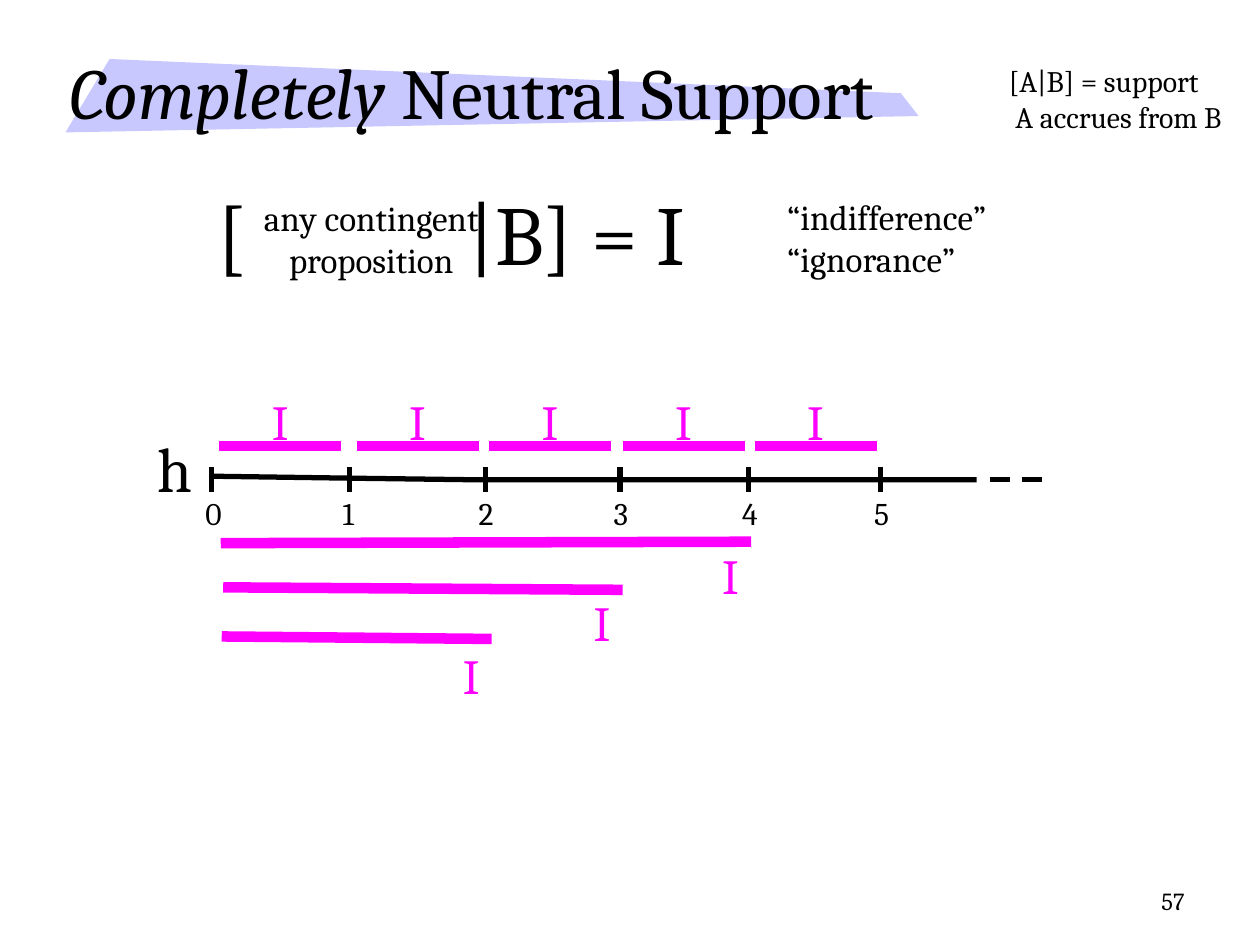
"""Build the slide on completely neutral support over a number line."""
from dataclasses import dataclass

from pptx import Presentation
from pptx.dml.color import RGBColor as Color
from pptx.enum.text import MSO_ANCHOR as Anchor, MSO_AUTO_SIZE as AutoSize, PP_ALIGN as Align
from pptx.oxml.xmlchemy import OxmlElement
from pptx.util import Cm, Pt


@dataclass(frozen=True)
class Theme:
    """Colours, font and type sizes."""
    font: str = "Cambria"
    ink: Color = Color(0x00, 0x00, 0x00)
    accent: Color = Color(0xFF, 0x00, 0xFF)
    highlight: Color = Color(0xC8, 0xC8, 0xFF)
    title: int = 41
    formula: int = 48
    variable: int = 36
    value: int = 28
    body: int = 20
    tick: int = 18
    note: int = 17
    page: int = 14
    axis_line: int = 3
    bar_line: int = 6


class SlideBuilder:
    """Draws styled elements on one slide."""

    def __init__(self, slide, theme):
        """Keep the slide and its style."""
        self.slide = slide
        self.theme = theme

    def style(self, text_frame, size, color, align=Align.LEFT):
        """Format every run of a text frame."""
        for paragraph in text_frame.paragraphs:
            paragraph.alignment = align
            for run in paragraph.runs:
                run.font.name = self.theme.font
                run.font.size = Pt(size)
                run.font.color.rgb = color

    def title(self, emphasis, rest, left, top, width, height):
        """Fill the title placeholder with an italic opening."""
        shape = self.slide.shapes.title
        shape.left, shape.top, shape.width, shape.height = map(Cm, (left, top, width, height))
        text_frame = shape.text_frame
        text_frame.text = emphasis
        text_frame.paragraphs[0].add_run().text = rest
        text_frame.auto_size = AutoSize.NONE
        text_frame.vertical_anchor = Anchor.MIDDLE
        self.style(text_frame, self.theme.title, self.theme.ink)
        text_frame.paragraphs[0].runs[0].font.italic = True

    def text(self, text, left, top, width, height, size, color=None,
             align=Align.LEFT, wrap=True, anchor=Anchor.TOP):
        """Add a text box and return it."""
        shape = self.slide.shapes.add_textbox(*map(Cm, (left, top, width, height)))
        text_frame = shape.text_frame
        text_frame.text = text
        text_frame.word_wrap = wrap
        text_frame.vertical_anchor = anchor
        self.style(text_frame, size, color or self.theme.ink, align)
        return shape

    def tab_stop(self, shape, position):
        """Set one left tab stop on the first paragraph."""
        properties = shape.text_frame.paragraphs[0]._p.get_or_add_pPr()
        tabs = OxmlElement("a:tabLst")
        tab = OxmlElement("a:tab")
        tab.set("pos", str(Cm(position)))
        tab.set("algn", "l")
        tabs.append(tab)
        properties.append(tabs)

    def line(self, start, end, color, weight):
        """Add a straight line."""
        connector = self.slide.shapes.add_connector(1, *map(Cm, (*start, *end)))
        connector.line.color.rgb = color
        connector.line.width = Pt(weight)
        connector.element.spPr.append(OxmlElement("a:effectLst"))

    def outline(self, points, closed):
        """Add a freeform through the points and return it."""
        start, *rest = [(Cm(x), Cm(y)) for x, y in points]
        builder = self.slide.shapes.build_freeform(*start)
        builder.add_line_segments(rest, close=closed)
        shape = builder.convert_to_shape()
        shape.shadow.inherit = False
        return shape

    def highlight(self, points):
        """Add the brush stroke behind the title."""
        shape = self.outline(points, closed=True)
        shape.fill.solid()
        shape.fill.fore_color.rgb = self.theme.highlight
        shape.line.fill.background()
        self.slide.shapes.title.element.addprevious(shape.element)

    def axis(self, points):
        """Add the open axis stroke."""
        shape = self.outline(points, closed=False)
        shape.fill.background()
        shape.line.color.rgb = self.theme.ink
        shape.line.width = Pt(self.theme.axis_line)

    def bar(self, start, end, label_left, label_top):
        """Add an interval bar with its support value."""
        self.line(start, end, self.theme.accent, self.theme.bar_line)
        self.text("I", label_left, label_top, 0.84, 1.45, self.theme.value,
                  self.theme.accent, wrap=False)


def main():
    """Compose and save the slide."""
    presentation = Presentation()
    presentation.slide_width, presentation.slide_height = Cm(25.4), Cm(19.05)
    theme = Theme()
    builder = SlideBuilder(presentation.slides.add_slide(presentation.slide_layouts[5]), theme)

    builder.title("Completely", " Neutral Support", 1.14, 0.99, 18.39, 1.7)
    builder.highlight([(2.21, 1.19), (18.16, 1.88), (18.52, 2.34), (1.32, 2.67)])
    builder.text("57", 18.21, 17.65, 5.92, 1.02, theme.page,
                 align=Align.RIGHT, anchor=Anchor.MIDDLE)
    builder.text("[A|B] = support\n A accrues from B", 20.09, 1.14, 5.03, 1.7, theme.note)
    builder.text("“indifference”\n“ignorance”", 15.62, 3.81, 5.46, 1.96, theme.body)
    formula = builder.text("[\t|B] = I", 4.14, 3.53, 10.54, 2.29, theme.formula)
    builder.tab_stop(formula, 5.06)
    builder.text("any contingent proposition", 4.88, 3.84, 5.21, 1.96, theme.body,
                 align=Align.CENTER)

    axis_y = 9.67
    builder.text("h", 2.92, 8.53, 1.14, 1.78, theme.variable, wrap=False)
    builder.axis([(4.22, 9.6), (7.04, 9.64), (9.37, axis_y), (19.69, axis_y)])
    for left in (19.96, 20.6):
        builder.line((left, axis_y), (left + 0.41, axis_y), theme.ink, theme.axis_line)
    for number, x in enumerate((4.27, 7.04, 9.78, 12.5, 15.09, 17.75)):
        builder.line((x, 9.42), (x, 9.91), theme.ink, theme.axis_line)
        builder.text(str(number), x - 0.38, 9.84, 0.84, 1.02, theme.tick, wrap=False)

    for left in (4.42, 7.19, 9.86, 12.55, 15.21):
        builder.bar((left, 8.99), (left + 2.46, 8.99), left + 0.81, 7.77)
    for start, end, label_top in (
        ((4.45, 10.95), (15.14, 10.92), 10.87),
        ((4.5, 11.84), (12.55, 11.89), 11.81),
        ((4.47, 12.83), (9.91, 12.88), 12.88),
    ):
        builder.bar(start, end, end[0] - 0.83, label_top)

    presentation.save("out.pptx")


if __name__ == "__main__":
    main()
